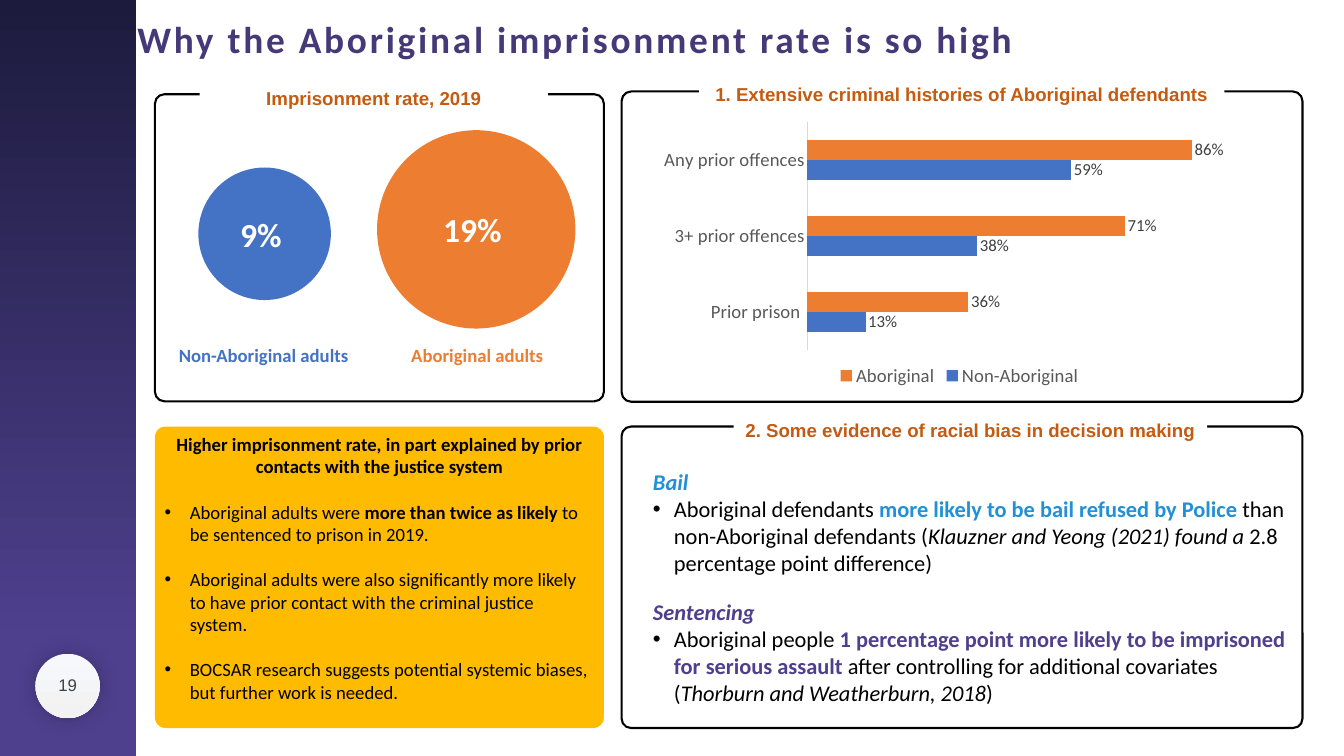
"""Builds the slide on Aboriginal imprisonment rates."""
from dataclasses import dataclass

from lxml import etree
from pptx import Presentation
from pptx import util as u
from pptx.chart import data as cd
from pptx.dml import color
from pptx.enum import chart as ec, shapes, text
from pptx.oxml import ns

Pt = u.Pt


@dataclass(frozen=True)
class Theme:
    """Colours, fonts and type sizes of the slide."""
    navy: str = "1C1B3D"
    purple: str = "4F408E"
    title: str = "453977"
    heading: str = "C55A11"
    blue: str = "4472C4"
    orange: str = "ED7D31"
    sky: str = "2190D7"
    yellow: str = "FFBB00"
    black: str = "000000"
    white: str = "FFFFFF"
    dark: str = "404040"
    grey: str = "595959"
    rule: str = "D9D9D9"
    pale: tuple = ("F6F8FC", "F2F2F2")
    body: str = "Calibri"
    head: str = "Arial"
    sz_title: int = 40
    sz_figure: int = 36
    sz_large: int = 24
    sz_base: int = 20
    sz_small: int = 18
    para_gap: float = 24.4


T = Theme()
RECT = shapes.MSO_SHAPE.RECTANGLE
ROUND = shapes.MSO_SHAPE.ROUNDED_RECTANGLE
OVAL = shapes.MSO_SHAPE.OVAL
CENTER = text.PP_ALIGN.CENTER
LEFT = text.PP_ALIGN.LEFT
MIDDLE = text.MSO_ANCHOR.MIDDLE


def rgb(value):
    """Return a colour object for a hex string."""
    return color.RGBColor.from_string(value)


def style(font, size, fill, name=T.body, bold=False, italic=False):
    """Set the face, size and colour of a font."""
    font.name, font.size, font.bold, font.italic = name, Pt(size), bold, italic
    font.color.rgb = rgb(fill)


def add_shape(s, kind, box, fill=None, line=None, radius=None):
    """Add a preset shape with an optional fill, outline and corner radius."""
    sp = s.shapes.add_shape(kind, *map(Pt, box))
    sp.shadow.inherit = False
    if radius is not None:
        sp.adjustments[0] = radius
    if fill:
        sp.fill.solid()
        sp.fill.fore_color.rgb = rgb(fill)
    else:
        sp.fill.background()
    if line:
        sp.line.color.rgb = rgb(line)
        sp.line.width = Pt(2.25)
    else:
        sp.line.fill.background()
    return sp


def add_gradient(s, kind, box, colors, end=1.0):
    """Add a shape with a top-to-bottom gradient."""
    sp = add_shape(s, kind, box)
    sp.fill.gradient()
    sp.fill.gradient_angle = 270
    for stop, value, pos in zip(sp.fill.gradient_stops, colors, (0, end)):
        stop.color.rgb = rgb(value)
        stop.position = pos
    return sp


def add_glow_shadow(sp):
    """Give a shape a soft shadow on all sides."""
    effects = sp._element.spPr.find(ns.qn("a:effectLst"))
    shadow = etree.SubElement(effects, ns.qn("a:outerShdw"), blurRad=str(Pt(22)),
                              dist="0", algn="ctr", rotWithShape="0")
    clr = etree.SubElement(shadow, ns.qn("a:srgbClr"), val=T.black)
    etree.SubElement(clr, ns.qn("a:alpha"), val="24000")


def set_label(sp, label, size, fill, align=CENTER, name=T.body, bold=True, wrap=True):
    """Write one vertically centred line of text in a shape."""
    tf = sp.text_frame
    tf.text = label
    tf.word_wrap = wrap
    tf.vertical_anchor = MIDDLE
    p = tf.paragraphs[0]
    p.alignment = align
    style(p.runs[0].font, size, fill, name, bold)


def add_label(s, box, *args, **kwargs):
    """Add a text box holding one line."""
    set_label(s.shapes.add_textbox(*map(Pt, box)), *args, **kwargs)


def add_panel(s, box, heading, tab):
    """Add an outlined panel whose heading interrupts the top edge."""
    add_shape(s, ROUND, box, line=T.black, radius=0.031)
    sp = add_shape(s, RECT, tab, fill=T.white)
    set_label(sp, heading, T.sz_base, T.heading, name=T.head)


def add_bullet(p, indent):
    """Give a paragraph a round bullet and hanging indent."""
    pPr = p._p.get_or_add_pPr()
    pPr.set("marL", str(Pt(indent)))
    pPr.set("indent", str(-Pt(indent)))
    etree.SubElement(pPr, ns.qn("a:buFont"), typeface=T.head)
    etree.SubElement(pPr, ns.qn("a:buChar"), char="•")


def write_paragraphs(tf, size, paragraphs):
    """Write paragraphs given as (runs, alignment, bullet indent, space before)."""
    tf.word_wrap = True
    tf.vertical_anchor = text.MSO_ANCHOR.TOP
    for i, (runs, align, indent, gap) in enumerate(paragraphs):
        p = tf.add_paragraph() if i else tf.paragraphs[0]
        p.alignment = align
        if indent:
            add_bullet(p, indent)
        if gap:
            p.space_before = Pt(gap)
        for content, look in runs:
            r = p.add_run()
            r.text = content
            style(r.font, size, **{"fill": T.black, **look})


def add_history_chart(s, box):
    """Add the bar chart of criminal histories."""
    data = cd.CategoryChartData(number_format="0%")
    data.categories = ["Prior prison ", "3+ prior offences", "Any prior offences"]
    data.add_series("Non-Aboriginal", (0.13, 0.38, 0.59))
    data.add_series("Aboriginal", (0.36, 0.71, 0.86))
    chart = s.shapes.add_chart(ec.XL_CHART_TYPE.BAR_CLUSTERED, *map(Pt, box), data).chart
    style(chart.font, T.sz_base, T.black)
    chart.has_title = False
    chart.has_legend = True
    chart.legend.position = ec.XL_LEGEND_POSITION.BOTTOM
    chart.legend.include_in_layout = False
    style(chart.legend.font, T.sz_base, T.grey)
    cat, val = chart.category_axis, chart.value_axis
    cat.major_tick_mark = cat.minor_tick_mark = ec.XL_TICK_MARK.NONE
    style(cat.tick_labels.font, T.sz_base, T.grey)
    cat.format.line.color.rgb = rgb(T.rule)
    cat.format.line.width = Pt(0.75)
    val.has_major_gridlines = False
    val.visible = False
    val.minimum_scale = 0
    plot = chart.plots[0]
    plot.gap_width = 182
    plot.vary_by_categories = False
    for series, fill in zip(plot.series, (T.blue, T.orange)):
        series.format.fill.solid()
        series.format.fill.fore_color.rgb = rgb(fill)
        labels = series.data_labels
        labels.show_value = True
        labels.number_format = "0%"
        labels.number_format_is_linked = False
        labels.position = ec.XL_LABEL_POSITION.OUTSIDE_END
        style(labels.font, T.sz_small, T.dark)


def main():
    """Build and save the slide."""
    prs = Presentation()
    prs.slide_width, prs.slide_height = Pt(1440), Pt(810)
    s = prs.slides.add_slide(prs.slide_layouts[5])
    add_gradient(s, RECT, (0, 0, 145.5, 810), (T.navy, T.purple), 0.85)
    add_glow_shadow(add_gradient(s, OVAL, (38, 700.5, 69, 69), T.pale))
    add_label(s, (38, 705.5, 69, 56), "19", T.sz_small, T.dark, name=T.head, bold=False)

    title = s.shapes.title
    title.left, title.top, title.width, title.height = map(Pt, (133, 13.5, 967, 55.5))
    set_label(title, "Why the Aboriginal imprisonment rate is so high",
              T.sz_title, T.title, wrap=False)
    title.text_frame.paragraphs[0].runs[0].font._element.set("spc", "300")

    add_panel(s, (166, 101, 481, 329), "Imprisonment rate, 2019", (214, 89, 373, 32.5))
    for group, rate, fill, circle, label in (
            ("Non-Aboriginal adults", "9% ", T.blue, (212.5, 179.5, 142, 142), (184.5, 365, 198, 31.5)),
            ("Aboriginal adults", "19% ", T.orange, (404, 139.5, 212.5, 212.5), (433.5, 365, 157, 31.5))):
        set_label(add_shape(s, OVAL, circle, fill), rate, T.sz_figure, T.white)
        add_label(s, label, group, T.sz_base, fill, align=LEFT, wrap=False)

    bold = {"bold": True}
    points = (
        [("Aboriginal adults were ", {}), ("more than twice as likely ", bold),
         ("to be sentenced to prison in 2019.", {})],
        [("Aboriginal adults were also significantly more likely to have prior contact "
          "with the criminal justice system.", {})],
        [("BOCSAR research suggests potential systemic biases, but further work is needed.", {})])
    lead = [("Higher imprisonment rate, in part explained by prior contacts "
             "with the justice system", bold)]
    summary = add_shape(s, ROUND, (166, 457, 481, 323), T.yellow, radius=0.035)
    write_paragraphs(summary.text_frame, T.sz_base, [(lead, CENTER, 0, 0)] + [
        (runs, LEFT, 27, T.para_gap) for runs in points])

    add_panel(s, (666, 98, 729.5, 332.5), "1. Extensive criminal histories of Aboriginal defendants",
              (749, 84, 563, 32.5))
    add_history_chart(s, (698.5, 124.5, 659, 294.5))

    add_panel(s, (666, 457, 729.5, 323), "2. Some evidence of racial bias in decision making",
              (786, 444, 507.5, 32.5))
    bail, sentence = ({"fill": c, "bold": True} for c in (T.sky, T.purple))
    italic = {"italic": True}
    evidence = s.shapes.add_textbox(*map(Pt, (692.5, 498, 696, 264)))
    write_paragraphs(evidence.text_frame, T.sz_large, [
        ([("Bail", {**bail, **italic})], LEFT, 0, 0),
        ([("Aboriginal defendants ", {}), ("more likely to be bail refused by Police ", bail),
          ("than non-Aboriginal defendants (", {}), ("Klauzner and Yeong (2021) found a ", italic),
          ("2.8 percentage point difference)", {})], LEFT, 22.5, 0),
        ([("Sentencing", {**sentence, **italic})], LEFT, 0, T.para_gap),
        ([("Aboriginal people ", {}),
          ("1 percentage point more likely to be imprisoned for serious assault", sentence),
          (" after controlling for additional covariates (", {}),
          ("Thorburn and Weatherburn, 2018", italic), (")", {})], LEFT, 22.5, 0)])
    prs.save("out.pptx")


if __name__ == "__main__":
    main()
